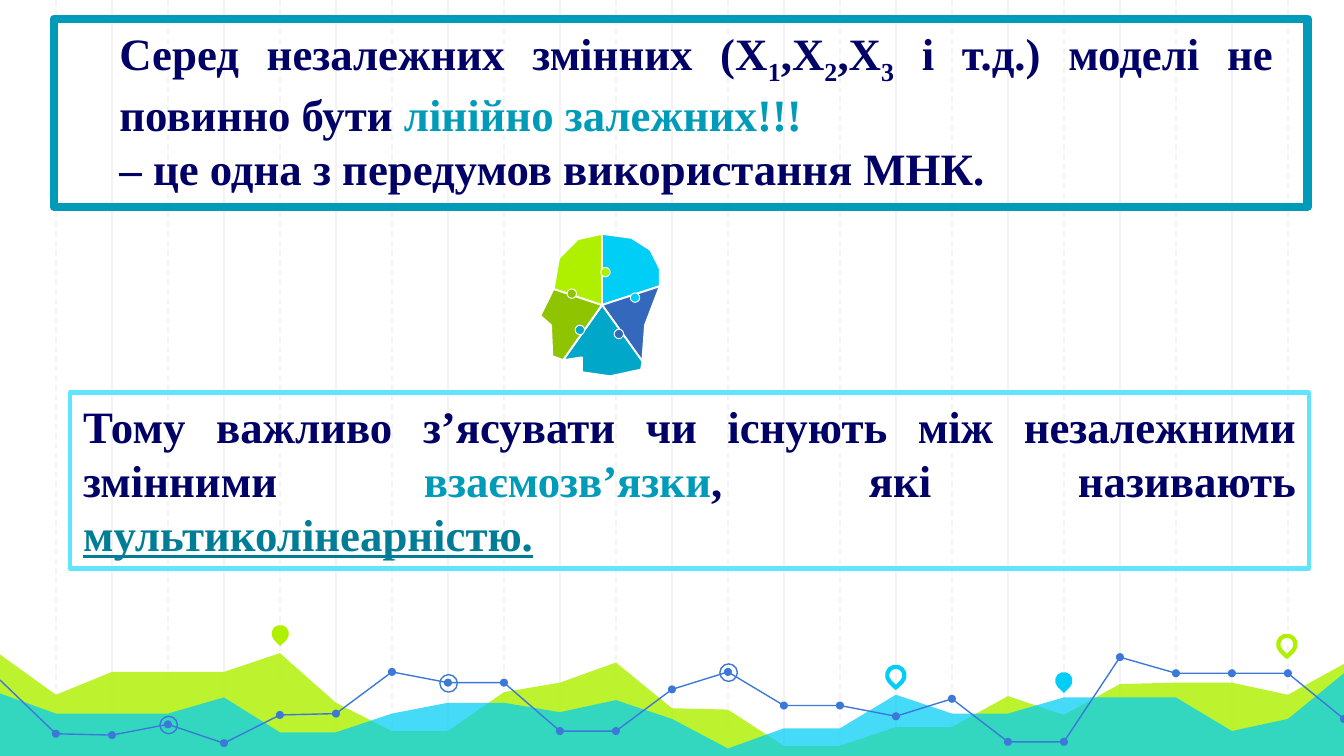
from lxml import etree
from pptx import Presentation
from pptx.dml.color import RGBColor
from pptx.enum.dml import MSO_LINE
from pptx.enum.shapes import MSO_CONNECTOR, MSO_SHAPE
from pptx.enum.text import MSO_ANCHOR, PP_ALIGN
from pptx.oxml.ns import qn
from pptx.util import Inches, Pt

WHITE = RGBColor(0xFF, 0xFF, 0xFF)
GRID = RGBColor(0xF3, 0xF3, 0xF3)
LIME = RGBColor(0xAF, 0xF0, 0x00)
OLIVE = RGBColor(0x8E, 0xC4, 0x00)
CYAN = RGBColor(0x00, 0xCE, 0xF6)
LIGHT_CYAN = RGBColor(0x61, 0xE5, 0xFF)
TEAL = RGBColor(0x00, 0x9B, 0xB8)
DARK_TEAL = RGBColor(0x00, 0x7D, 0x96)
SEA = RGBColor(0x00, 0xA7, 0xC8)
BLUE = RGBColor(0x3C, 0x78, 0xD8)
INDIGO = RGBColor(0x34, 0x68, 0xBC)
NAVY = RGBColor(0x00, 0x00, 0x66)

prs = Presentation()
prs.slide_width = Inches(10)
prs.slide_height = Inches(10) * 9 // 16
slide = prs.slides.add_slide(prs.slide_layouts[6])
shapes = slide.shapes


def preset(kind, x, y, w, h, fill=None, line=None, width=0.75):
    shape = shapes.add_shape(kind, Inches(x), Inches(y), Inches(w), Inches(h))
    return paint(shape, fill, line, width)


def paint(shape, fill=None, line=None, width=0.75):
    shape.shadow.inherit = False
    for part, color in ((shape.fill, fill), (shape.line.fill, line)):
        if color is None:
            part.background()
        else:
            part.solid()
            part.fore_color.rgb = color
    if line is not None:
        shape.line.width = Pt(width)
    return shape


# Vertical grid: solid and dashed lines in turn
step = 10 / 24
for i in range(1, 24):
    x = Inches(step * i)
    grid_line = shapes.add_connector(MSO_CONNECTOR.STRAIGHT, x, 0, x, Inches(5.65))
    grid_line.line.color.rgb = GRID
    grid_line.line.width = Pt(0.75)
    if i % 2:
        grid_line.line.dash_style = MSO_LINE.DASH
    etree.SubElement(grid_line._element.spPr, qn("a:effectLst"))

# Two waves and a line graph, one level for every grid step
lime_wave = [4.87, 5.17, 5, 5, 5, 4.86, 5.23, 5.44, 5.44, 5.15, 5.08, 4.93, 5.27,
             5.28, 5.55, 5.55, 5.41, 5.41, 5.18, 5.32, 5.09, 5.08, 5.08, 5.17, 4.94]
cyan_wave = [5.16, 5.31, 5.31, 5.31, 5.19, 5.45, 5.45, 5.31, 5.23, 5.23, 5.3, 5.21, 5.35,
             5.57, 5.42, 5.42, 5.17, 5.31, 5.31, 5.19, 5.19, 5.19, 5.44, 5.35, 5.01]
graph = [5.06, 5.46, 5.47, 5.39, 5.53, 5.32, 5.31, 5, 5.08, 5.08, 5.44, 5.44, 5.13,
         5, 5.25, 5.25, 5.33, 5.2, 5.52, 5.52, 4.89, 5.01, 5.01, 5.01, 5.35]
for levels, color, opacity in ((lime_wave, LIME, 82), (cyan_wave, CYAN, 73), (graph, BLUE, None)):
    nodes = [(Inches(step * i), Inches(level)) for i, level in enumerate(levels)]
    if opacity:
        nodes += [(Inches(10), Inches(5.65)), (0, Inches(5.65))]
    builder = shapes.build_freeform(*nodes[0])
    builder.add_line_segments(nodes[1:], close=bool(opacity))
    curve = builder.convert_to_shape()
    if opacity:
        paint(curve, color)
        tint = curve._element.spPr.find(qn("a:solidFill"))[0]
        etree.SubElement(tint, qn("a:alpha"), val=str(opacity * 1000))
    else:
        paint(curve, None, color)

# Dots on the graph, rings around three of them
for i, level in enumerate(graph):
    if i > 0:
        preset(MSO_SHAPE.OVAL, step * i - 0.03, level - 0.03, 0.06, 0.06, BLUE)
    if i in (3, 8, 13):
        preset(MSO_SHAPE.OVAL, step * i - 0.06, level - 0.06, 0.13, 0.13, None, BLUE)

# Map pins
for x, y, fill, line in ((2.02, 4.65, LIME, None), (6.6, 4.96, None, CYAN),
                         (7.85, 5, CYAN, None), (9.51, 4.73, None, LIME)):
    preset(MSO_SHAPE.TEAR, x, y, 0.13, 0.13, fill, line, 2.25).rotation = 135

# Two framed statements: (text, format changes) for every run
plain = {"color": NAVY}
accent = {"color": TEAL}
sub = {"color": NAVY, "baseline": "-25000"}
premise = [
    [("Серед незалежних змінних (Х", plain), ("1", sub), (",Х", plain), ("2", sub),
     (",Х", plain), ("3", sub), (" і т.д.) моделі не повинно бути ", plain),
     ("лінійно залежних!!! ", accent)],
    [("– це одна з передумов використання МНК.", plain)]]
conclusion = [
    [("Тому важливо з’ясувати чи існують між незалежними змінними ", plain),
     ("взаємозв’язки", accent), (", які називають ", plain),
     ("мультиколінеарністю.", {"color": DARK_TEAL, "underline": True}), (" ", plain)]]

premise_frame = preset(MSO_SHAPE.RECTANGLE, 0.4, 0.14, 9.33, 1.4, None, TEAL, 4.5)
premise_text = shapes.add_textbox(Inches(0.79), Inches(0.14), Inches(8.78), Inches(1.31))
conclusion_frame = preset(MSO_SHAPE.RECTANGLE, 0.52, 2.92, 9.22, 1.31, None, LIGHT_CYAN, 2.25)
for frame in (premise_frame, conclusion_frame):
    etree.SubElement(frame.line._get_or_add_ln(), qn("a:round"))

base_format = {"name": "Times New Roman", "size": Pt(24), "bold": True}
for holder, statement in ((premise_text, premise), (conclusion_frame, conclusion)):
    body = holder.text_frame
    body.word_wrap = True
    body.vertical_anchor = MSO_ANCHOR.TOP
    for i, sentence in enumerate(statement):
        para = body.paragraphs[0] if i == 0 else body.add_paragraph()
        para.alignment = PP_ALIGN.JUSTIFY
        for words, changes in sentence:
            run = para.add_run()
            run.text = words
            for key, value in {**base_format, **changes}.items():
                if key == "color":
                    run.font.color.rgb = value
                elif key == "baseline":
                    run.font._element.set(key, value)
                else:
                    setattr(run.font, key, value)

# Head of five puzzle pieces: each runs from the hub along its rim to the next piece
hub = (4.48, 2.27)
puzzle = [
    (CYAN, [(4.48, 1.74), (4.7, 1.77), (4.84, 1.86), (4.91, 2)], (4.72, 2.21)),
    (INDIGO, [(4.91, 2.13), (4.8, 2.42)], (4.6, 2.48)),
    (SEA, [(4.78, 2.69), (4.77, 2.75), (4.54, 2.8), (4.33, 2.77), (4.33, 2.66)], (4.31, 2.45)),
    (OLIVE, [(4.19, 2.68), (4.11, 2.65), (4.1, 2.42), (4.02, 2.35)], (4.25, 2.18)),
    (LIME, [(4.12, 2.15), (4.16, 1.92), (4.3, 1.78)], (4.5, 2.02))]
for i, (color, rim, tab) in enumerate(puzzle):
    next_rim = puzzle[(i + 1) % len(puzzle)][1]
    corners = [(Inches(x), Inches(y)) for x, y in [hub, *rim, next_rim[0]]]
    builder = shapes.build_freeform(*corners[0])
    builder.add_line_segments(corners[1:])
    paint(builder.convert_to_shape(), color, WHITE, 1)
for color, rim, (x, y) in puzzle:
    preset(MSO_SHAPE.OVAL, x - 0.03, y - 0.03, 0.07, 0.07, color, WHITE, 0.5)

prs.save("out.pptx")
